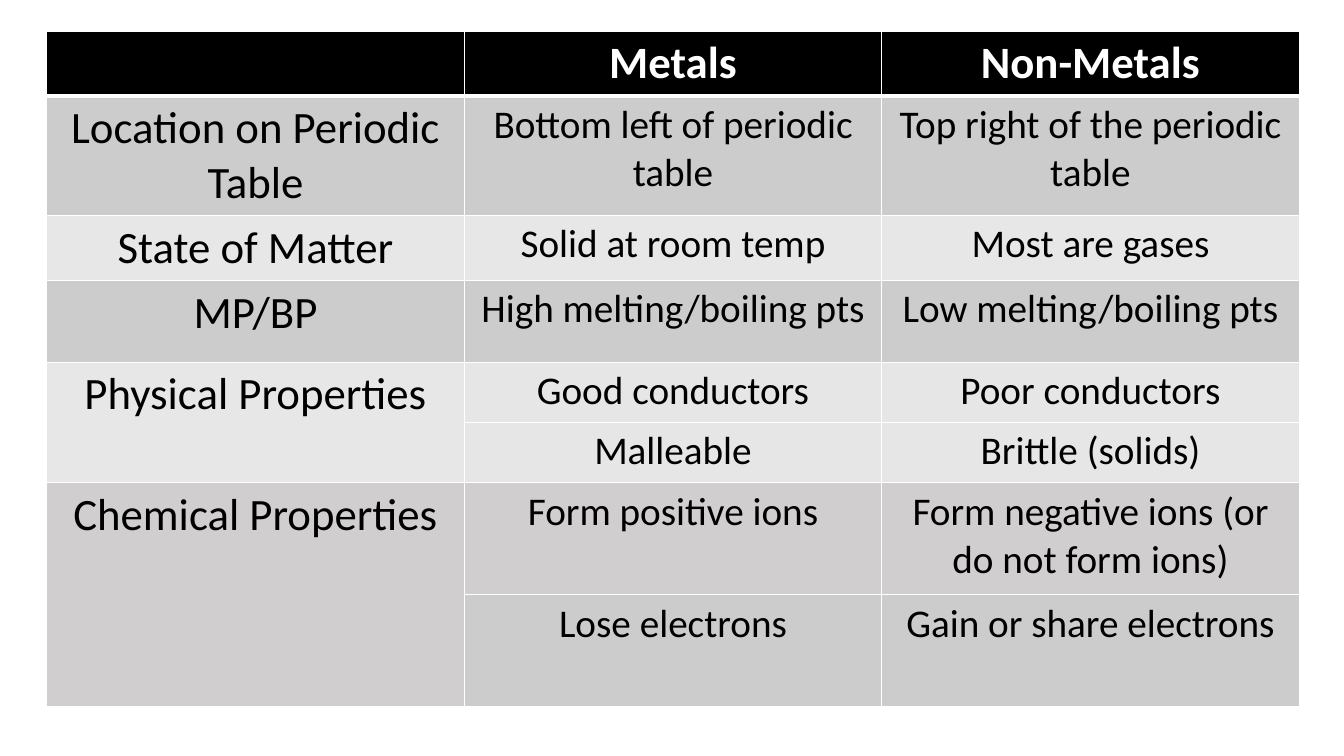
from dataclasses import dataclass

from lxml.etree import SubElement as Sub
from pptx import Presentation
from pptx.dml.color import RGBColor as Rgb
from pptx.enum.text import PP_ALIGN as Align
from pptx.oxml.ns import qn
from pptx.table import Table, _Cell as Cell
from pptx.util import Cm, Pt

FONT = "Calibri"
BLACK, WHITE = "000000", "FFFFFF"
DARK, LIGHT, PALE, WARM = "CCCCCC", "E7E7E7", "E7E6E6", "D0CECE"
COLS, WIDTH = 3, 10.52
BIG, SMALL = 32, 28


@dataclass
class Row:
    high: float
    label: str
    metal: str
    other: str
    fill: str
    side: str = ""  # label fill, where it differs
    span: int = 1


ROWS = [
    Row(1.52, "", "Metals", "Non-Metals", BLACK),
    Row(2.82, "Location on Periodic Table", "Bottom left of periodic table",
        "Top right of the periodic table", DARK),
    Row(1.52, "State of Matter", "Solid at room temp", "Most are gases", LIGHT),
    Row(2.06, "MP/BP", "High melting/boiling pts", "Low melting/boiling pts", DARK),
    Row(1.52, "Physical Properties", "Good conductors", "Poor conductors",
        PALE, LIGHT, 2),
    Row(1.52, "", "Malleable", "Brittle (solids)", PALE, LIGHT),
    Row(2.82, "Chemical Properties", "Form positive ions",
        "Form negative ions (or do not form ions)", WARM, span=2),
    Row(2.82, "", "Lose electrons", "Gain or share electrons", DARK, WARM),
]


def color(fmt, code: str) -> None:
    """Apply a hex colour to a fill or a font."""
    if hasattr(fmt, "solid"):
        fmt.solid()
        fmt.fore_color.rgb = Rgb.from_string(code)
    else:
        fmt.color.rgb = Rgb.from_string(code)


def edge(cell: Cell, top: int, base: int) -> None:
    """Draw white borders; left and right are one point wide."""
    props = cell._tc.get_or_add_tcPr()
    sides = {"lnL": 1, "lnR": 1, "lnT": top, "lnB": base}
    for i, (tag, wide) in enumerate(sides.items()):
        line = Sub(props, qn(f"a:{tag}"), w=str(Pt(wide)))
        Sub(Sub(line, qn("a:solidFill")), qn("a:srgbClr"), val=WHITE)
        props.insert(i, line)


def write(cell: Cell, text: str, size: int, head: bool) -> None:
    para = cell.text_frame.paragraphs[0]
    para.alignment = Align.CENTER
    if not text:
        return
    run = para.add_run()
    run.text = text
    run.font.name, run.font.size, run.font.bold = FONT, Pt(size), head
    color(run.font, WHITE if head else BLACK)


def draw(table: Table, r: int, row: Row) -> None:
    table.rows[r].height = Cm(row.high)
    head = r == 0
    for c, text in enumerate((row.label, row.metal, row.other)):
        cell = table.cell(r, c)
        color(cell.fill, row.side if c == 0 and row.side else row.fill)
        edge(cell, 3 if r == 1 else 1, 3 if head else 1)
        write(cell, text, BIG if head or c == 0 else SMALL, head)
    if row.span > 1:
        table.cell(r, 0).merge(table.cell(r + row.span - 1, 0))


def main() -> None:
    deck = Presentation()
    deck.slide_width, deck.slide_height = Cm(33.87), Cm(19.05)
    slide = deck.slides.add_slide(deck.slide_layouts[6])

    # Comparison table
    high = sum(row.high for row in ROWS)
    frame = slide.shapes.add_table(len(ROWS), COLS, Cm(1.18), Cm(0.78),
                                   Cm(COLS * WIDTH), Cm(high))
    for col in frame.table.columns:
        col.width = Cm(WIDTH)
    for r, row in enumerate(ROWS):
        draw(frame.table, r, row)

    deck.save("out.pptx")


if __name__ == "__main__":
    main()
